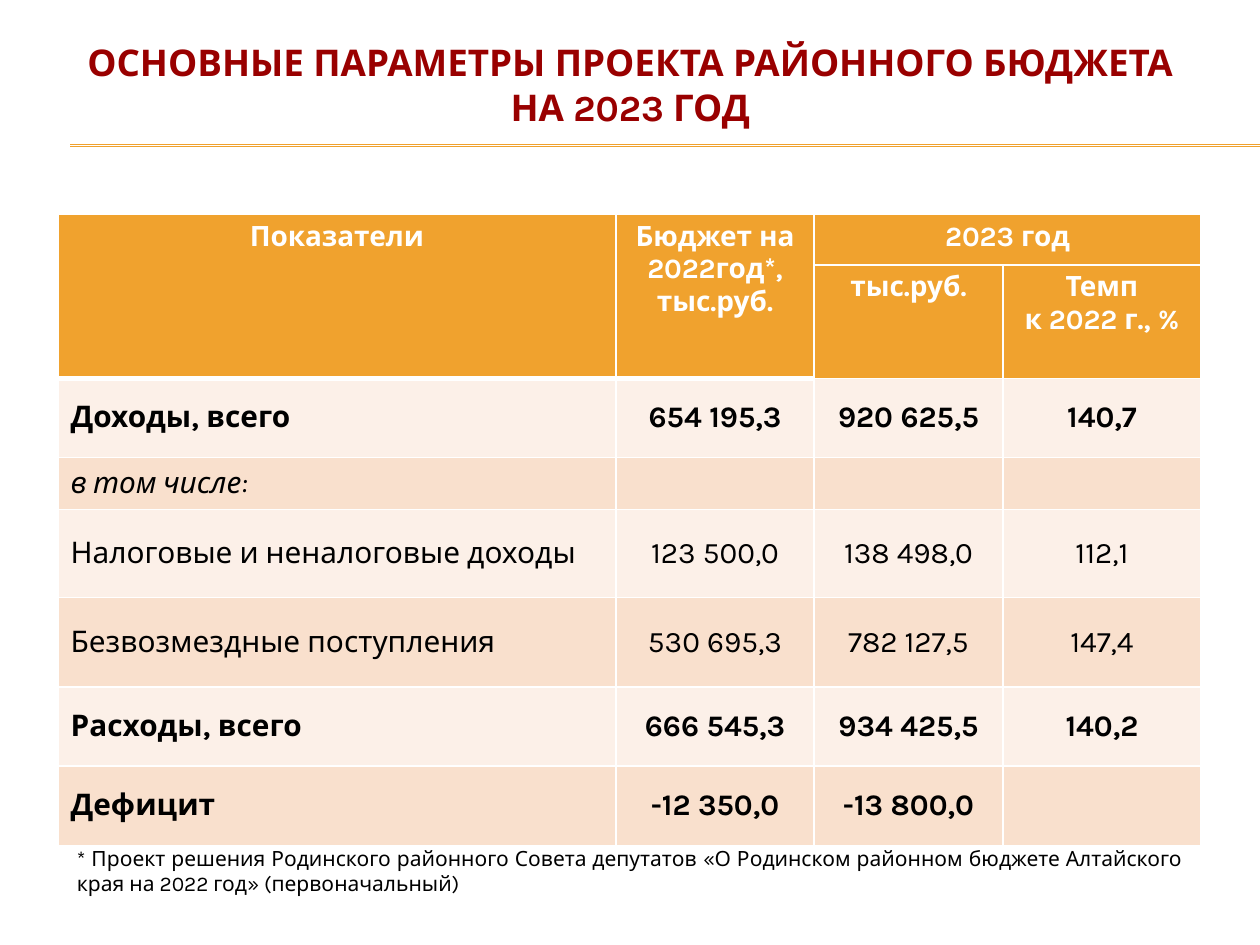
from lxml.etree import SubElement
from pptx import Presentation
from pptx.dml.color import RGBColor
from pptx.enum.shapes import MSO_CONNECTOR
from pptx.enum.text import MSO_ANCHOR, PP_ALIGN
from pptx.oxml.ns import qn
from pptx.util import Cm, Pt

ORANGE = RGBColor(0xF0, 0xA2, 0x2E)
LIGHT = RGBColor(0xFC, 0xF0, 0xE8)
PEACH = RGBColor(0xF9, 0xE0, 0xCD)
RED = RGBColor(0x99, 0x00, 0x00)
WHITE = RGBColor(0xFF, 0xFF, 0xFF)
BLACK = RGBColor(0x00, 0x00, 0x00)


def write(tf, text, size, color, align, bold=False, italic=False):
    tf.word_wrap = True
    tf.text = text
    for p in tf.paragraphs:
        p.alignment = align
        for r in p.runs:
            r.font.name = "Karla"
            r.font.size = Pt(size)
            r.font.bold = bold
            r.font.italic = italic
            r.font.color.rgb = color


def paint(cell, color, bottom=1):
    tcPr = cell._tc.get_or_add_tcPr()
    for side, width in (("L", 1), ("R", 1), ("T", 1), ("B", bottom)):
        ln = SubElement(tcPr, qn(f"a:ln{side}"), w=str(Pt(width)))
        fill = SubElement(ln, qn("a:solidFill"))
        SubElement(fill, qn("a:srgbClr"), val=str(WHITE))
    cell.fill.solid()
    cell.fill.fore_color.rgb = color


prs = Presentation()
prs.slide_width, prs.slide_height = Cm(25.4), Cm(19.05)
s = prs.slides.add_slide(prs.slide_layouts[6])

for y in (2.92, 2.95):
    rule = s.shapes.add_connector(MSO_CONNECTOR.STRAIGHT, Cm(1.42), Cm(y), Cm(25.4), Cm(y))
    rule.line.color.rgb = ORANGE
    rule.line.width = Pt(0.75)
    SubElement(rule._element.spPr, qn("a:effectLst"))

title = s.shapes.add_textbox(Cm(0.64), Cm(0.53), Cm(24.13), Cm(2.34))
write(title.text_frame, "ОСНОВНЫЕ ПАРАМЕТРЫ ПРОЕКТА РАЙОННОГО БЮДЖЕТА\vНА 2023 ГОД",
      21, RED, PP_ALIGN.CENTER, bold=True)
title.text_frame.vertical_anchor = MSO_ANCHOR.MIDDLE

widths = [11.25, 3.99, 3.81, 3.99]
heights = [1.02, 1.02, 1.6, 1.04, 1.78, 1.8, 1.6, 1.6]
table = s.shapes.add_table(len(heights), len(widths), Cm(1.17), Cm(4.32),
                           Cm(sum(widths)), Cm(sum(heights))).table
for column, width in zip(table.columns, widths):
    column.width = Cm(width)
for row, height in zip(table.rows, heights):
    row.height = Cm(height)

headers = [
    ["Показатели", "Бюджет на 2022год*, тыс.руб.", "2023 год", ""],
    ["", "", "тыс.руб.", "Темп\nк 2022 г., %"],
]
for i, labels in enumerate(headers):
    for j, label in enumerate(labels):
        cell = table.cell(i, j)
        paint(cell, ORANGE, bottom=3 if j < 2 else 1)
        if label:
            write(cell.text_frame, label, 16, WHITE, PP_ALIGN.CENTER, bold=True)
for j in (0, 1):
    table.cell(0, j).merge(table.cell(1, j))
table.cell(0, 2).merge(table.cell(0, 3))

rows = [
    (["Доходы, всего", "654 195,3", "920 625,5", "140,7"], True, False),
    (["в том числе:", "", "", ""], False, True),
    (["Налоговые и неналоговые доходы", "123 500,0", "138 498,0", "112,1"], False, False),
    (["Безвозмездные поступления", "530 695,3", "782 127,5", "147,4"], False, False),
    (["Расходы, всего", "666 545,3", "934 425,5", "140,2"], True, False),
    (["Дефицит", "-12 350,0", "-13 800,0", ""], True, False),
]
for i, (values, bold, italic) in enumerate(rows):
    for j, value in enumerate(values):
        cell = table.cell(i + 2, j)
        paint(cell, PEACH if i % 2 else LIGHT)
        cell.vertical_anchor = MSO_ANCHOR.MIDDLE
        if value:
            align = PP_ALIGN.CENTER if j else PP_ALIGN.LEFT
            write(cell.text_frame, value, 17, BLACK, align, bold, italic)

note = s.shapes.add_textbox(Cm(1.3), Cm(16.92), Cm(22.81), Cm(1.8))
write(note.text_frame, "* Проект решения Родинского районного Совета депутатов «О Родинском "
      "районном бюджете Алтайского края на 2022 год» (первоначальный)",
      12, BLACK, PP_ALIGN.JUSTIFY)

prs.save("out.pptx")
